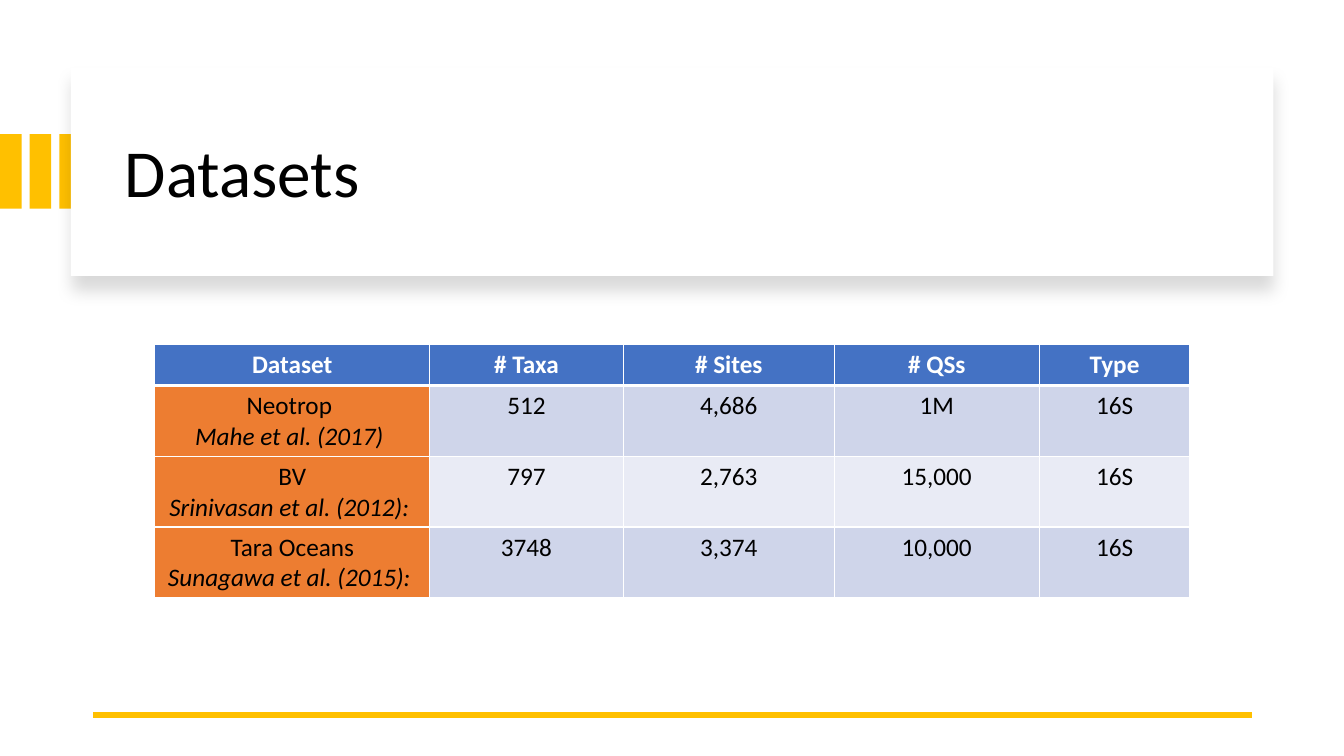
from lxml import etree
from pptx import Presentation
from pptx.dml.color import RGBColor
from pptx.enum.shapes import MSO_CONNECTOR, MSO_SHAPE
from pptx.enum.text import MSO_ANCHOR, PP_ALIGN
from pptx.oxml import parse_xml
from pptx.oxml.ns import qn
from pptx.util import Pt

LINE, RECT = MSO_CONNECTOR.STRAIGHT, MSO_SHAPE.RECTANGLE
MID, LEFT, MID_ROW = MSO_ANCHOR.MIDDLE, PP_ALIGN.LEFT, PP_ALIGN.CENTER
NS = "http://schemas.openxmlformats.org/drawingml/2006/main"

TITLE = "Datasets"
HEAD = ["Dataset", "# Taxa", "# Sites", "# QSs", "Type"]
ROWS = [
    [("Neotrop ", "Mahe et al. (2017) "), "512", "4,686", "1M", "16S"],
    [("BV", "Srinivasan et al. (2012): "), "797", "2,763", "15,000", "16S"],
    [("Tara Oceans", "Sunagawa et al. (2015): "), "3748", "3,374", "10,000", "16S"],
]
WIDTHS = [196.5, 138.2, 150.8, 146.4, 107.6]
HEAD_H, ROW_H = 29.5, 50.6
GOLD, WHITE, BLACK = "FFC000", "FFFFFF", "000000"
BLUE, ORANGE = "4472C4", "ED7D31"
BANDS = ["CFD5EA", "E9EBF5"]


def color(hex_code):
    return RGBColor.from_string(hex_code)


def write(frame, lines, size=18, ink=BLACK, bold=False, align=MID_ROW, gap=1.0):
    for i, line in enumerate(lines):
        para = frame.paragraphs[0] if i == 0 else frame.add_paragraph()
        para.alignment = align
        para.line_spacing = gap
        run = para.add_run()
        run.text = line
        font = run.font
        font.name, font.size = "Calibri", Pt(size)
        font.bold, font.italic = bold, i > 0
        font.color.rgb = color(ink)


def block(x, y, w, h, fill):
    shape = slide.shapes.add_shape(RECT, Pt(x), Pt(y), Pt(w), Pt(h))
    shape.shadow.inherit = False
    shape.fill.solid()
    shape.fill.fore_color.rgb = color(fill)
    shape.line.fill.background()
    return shape


def edge(cell, sides):
    props = cell._tc.get_or_add_tcPr()
    for i, (side, wide) in enumerate(sides.items()):
        props.insert(i, parse_xml(
            f'<a:ln{side} xmlns:a="{NS}" w="{Pt(wide)}"><a:solidFill>'
            f'<a:srgbClr val="{WHITE}"/></a:solidFill></a:ln{side}>'))


deck = Presentation()
deck.slide_width, deck.slide_height = Pt(960), Pt(540)
slide = deck.slides.add_slide(deck.slide_layouts[6])

for i in range(3):
    block(i * 21.2, 95.8, 15.4, 53.2, GOLD)

card = block(50.6, 48.2, 859, 149, WHITE)
glow = card._element.spPr.find(qn("a:effectLst"))
glow.append(parse_xml(
    f'<a:outerShdw xmlns:a="{NS}" blurRad="{Pt(11)}" dist="{Pt(10)}" '
    f'dir="5400000" algn="t" rotWithShape="0"><a:srgbClr val="{BLACK}">'
    f'<a:alpha val="15000"/></a:srgbClr></a:outerShdw>'))

title = slide.shapes.add_textbox(Pt(82.1), Pt(64.1), Pt(782.6), Pt(122.4)).text_frame
title.word_wrap = True
title.vertical_anchor = MID
write(title, [TITLE], size=48, align=LEFT, gap=0.9)

rule = slide.shapes.add_connector(LINE, Pt(894.2), Pt(510.5), Pt(66.2), Pt(510.5))
rule.line.color.rgb = color(GOLD)
rule.line.width = Pt(4.5)
etree.SubElement(rule._element.spPr, qn("a:effectLst"))

grid = slide.shapes.add_table(
    len(ROWS) + 1, len(HEAD), Pt(110.5), Pt(245.8),
    Pt(sum(WIDTHS)), Pt(HEAD_H + ROW_H * len(ROWS))).table
for col, wide in zip(grid.columns, WIDTHS):
    col.width = Pt(wide)
for r, row in enumerate([HEAD] + ROWS):
    top = r == 0
    grid.rows[r].height = Pt(HEAD_H if top else ROW_H)
    for c, item in enumerate(row):
        cell = grid.cell(r, c)
        fill = BLUE if top else ORANGE if c == 0 else BANDS[(r - 1) % 2]
        cell.fill.solid()
        cell.fill.fore_color.rgb = color(fill)
        edge(cell, {"L": 1, "R": 1, "T": 3 if r == 1 else 1, "B": 3 if top else 1})
        lines = [item] if isinstance(item, str) else item
        write(cell.text_frame, lines, ink=WHITE if top else BLACK, bold=top)

deck.save("out.pptx")
